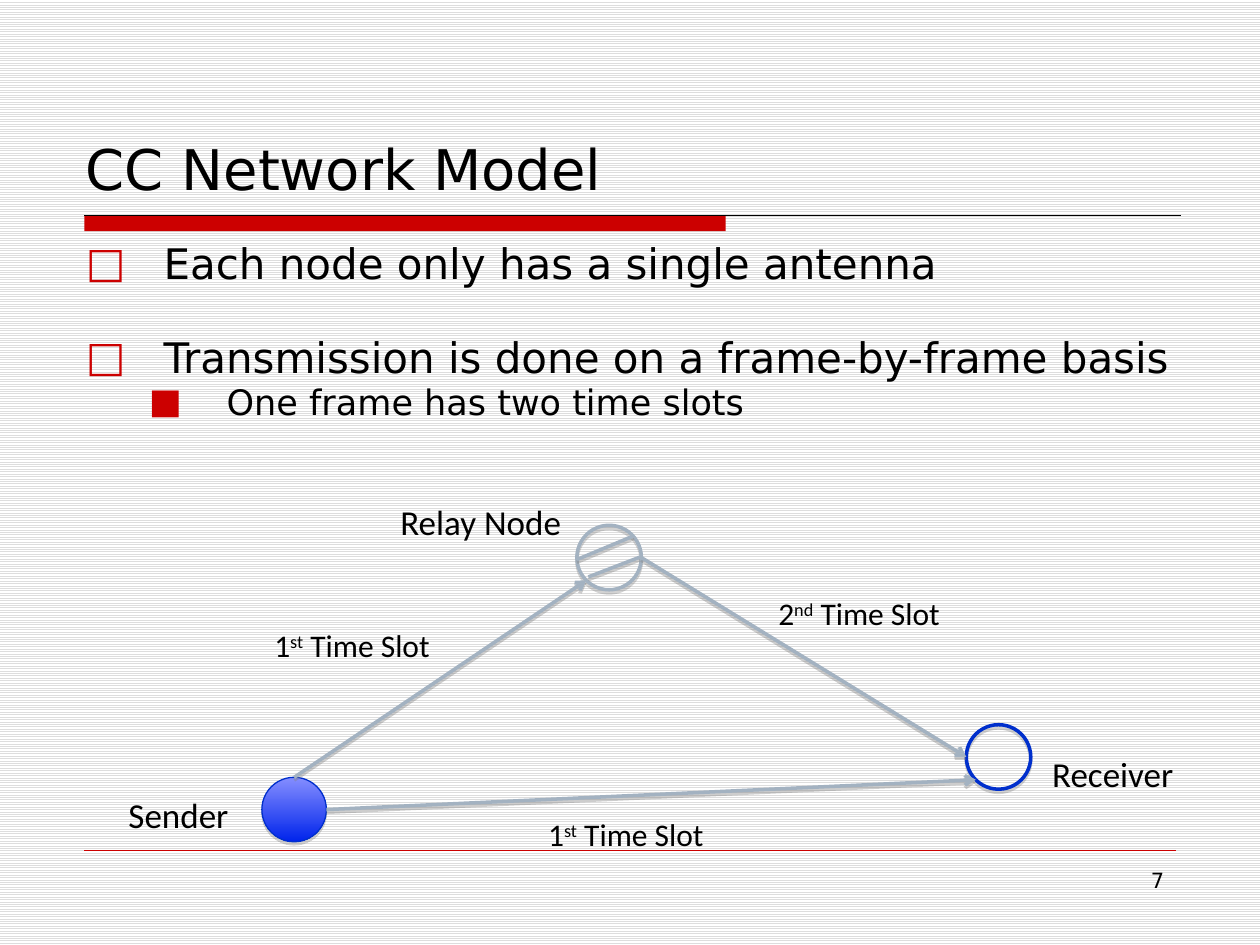
"""Build the CC Network Model slide."""
import math

import pptx
import pptx.dml.color
import pptx.enum.dml
import pptx.enum.shapes
import pptx.enum.text
import pptx.oxml
import pptx.oxml.ns
import pptx.util
from lxml import etree

Cm, Pt = pptx.util.Cm, pptx.util.Pt
RGBColor = pptx.dml.color.RGBColor
SHAPE = pptx.enum.shapes.MSO_SHAPE
ALIGN = pptx.enum.text.PP_ALIGN
qn = pptx.oxml.ns.qn

BLACK = RGBColor(0x00, 0x00, 0x00)
WHITE = RGBColor(0xFF, 0xFF, 0xFF)
STRIPE = RGBColor(0xDD, 0xDD, 0xDD)
RED = RGBColor(0xCC, 0x00, 0x00)
STEEL = RGBColor(0xA3, 0xB2, 0xC1)
BLUE = RGBColor(0x00, 0x2F, 0xCC)
GRADIENT = [RGBColor(0x85, 0x8E, 0xFF), RGBColor(0x00, 0x24, 0xEB)]
SHADOW = RGBColor(0x80, 0x80, 0x80)

HEAD_FONT, LABEL_FONT = "DejaVu Sans", "Calibri"
DIAMETER = 1.3

BULLETS = [
    ("Each node only has a single antenna", 0, 24, "□", 1.57, 1.57, 4.8, 1),
    ("Transmission is done on a frame-by-frame basis", 0, 24, "□", 1.57, 1.57, 30.8, 0.8),
    ("One frame has two time slots", 1, 20, "■", 2.84, 1.57, 4, 0.8),
]
NODES = {
    "sender": (5.28, 15.67, BLUE, 0.75),
    "relay": (11.63, 10.59, STEEL, 2),
    "receiver": (19.48, 14.61, BLUE, 2),
}
RELAY_STRIPES = [((11.86, 11.63), (12.9, 11.23)), ((11.63, 11.28), (12.78, 10.8))]
ARROWS = [
    ("sender", 0, "receiver", 135),
    ("sender", 270, "relay", 135),
    ("relay", 0, "receiver", 180),
]
LABELS = [
    (2.34, 15.88, 2.54, 1.09, 20, ["Sender"]),
    (20.96, 15.04, 2.97, 1.09, 20, ["Receiver"]),
    (7.82, 9.96, 3.78, 1.09, 20, ["Relay Node"]),
    (10.8, 16.31, 3.68, 1.02, 18, ["1", "st", " Time Slot"]),
    (15.44, 11.86, 3.84, 1.02, 18, ["2", "nd", " Time Slot"]),
    (5.28, 12.5, 3.68, 1.02, 18, ["1", "st", " Time Slot"]),
]


def set_effects(sp, alpha=0, dist=0):
    """Replace the theme shadow with a given one, or with none."""
    effects = etree.SubElement(sp.element.spPr, qn("a:effectLst"))
    if alpha:
        shadow = etree.SubElement(effects, qn("a:outerShdw"), blurRad="0",
                                  dist=str(Pt(dist)), dir="5400000", rotWithShape="0")
        color = etree.SubElement(shadow, qn("a:srgbClr"), val=str(SHADOW))
        etree.SubElement(color, qn("a:alpha"), val=str(alpha * 1000))


def add_line(s, start, end, color, width, arrow=False, shadow=True):
    """Add a straight line, optionally with an arrowhead and a shadow."""
    sp = s.shapes.add_connector(pptx.enum.shapes.MSO_CONNECTOR.STRAIGHT,
                                *(Cm(v) for v in start + end))
    sp.line.color.rgb = color
    sp.line.width = Pt(width)
    if arrow:
        etree.SubElement(sp.element.spPr.find(qn("a:ln")), qn("a:tailEnd"), type="arrow")
    set_effects(sp, *((38, 1.6) if shadow else ()))


def add_box(s, x, y, w, h, wrap=True):
    """Add a text box and return its frame."""
    tf = s.shapes.add_textbox(Cm(x), Cm(y), Cm(w), Cm(h)).text_frame
    tf.word_wrap = wrap
    return tf


def add_run(p, text, size, font):
    """Add one black run."""
    r = p.add_run()
    r.text = text
    r.font.size = Pt(size)
    r.font.name = font
    r.font.color.rgb = BLACK
    return r


def add_bullets(tf):
    """Fill the frame with the bulleted list."""
    for i, (text, level, size, mark, left, hang, before, spacing) in enumerate(BULLETS):
        p = tf.paragraphs[0] if i == 0 else tf.add_paragraph()
        p.level = level
        p.space_before = Pt(before)
        p.line_spacing = spacing
        pPr = p._p.get_or_add_pPr()
        pPr.set("marL", str(Cm(left)))
        pPr.set("indent", str(-Cm(hang)))
        color = etree.SubElement(pPr, qn("a:buClr"))
        etree.SubElement(color, qn("a:srgbClr"), val=str(RED))
        etree.SubElement(pPr, qn("a:buFont"), typeface=HEAD_FONT)
        etree.SubElement(pPr, qn("a:buChar"), char=mark)
        add_run(p, text, size, HEAD_FONT)


def add_node(s, name):
    """Add one network node."""
    x, y, color, width = NODES[name]
    sp = s.shapes.add_shape(SHAPE.OVAL, Cm(x), Cm(y), Cm(DIAMETER), Cm(DIAMETER))
    if name == "sender":
        sp.fill.gradient()
        sp.fill.gradient_angle = 270
        for stop, shade, position in zip(sp.fill.gradient_stops, GRADIENT, (0, 1)):
            stop.color.rgb = shade
            stop.position = position
    else:
        sp.fill.background()
    sp.line.color.rgb = color
    sp.line.width = Pt(width)
    set_effects(sp, 35, 1.8)


def rim_point(name, degrees):
    """Return the point on a node's rim, clockwise from its right side."""
    x, y = NODES[name][:2]
    radius, angle = DIAMETER / 2, math.radians(degrees)
    return x + radius * (1 + math.cos(angle)), y + radius * (1 + math.sin(angle))


def main():
    prs = pptx.Presentation()
    prs.slide_width, prs.slide_height = Cm(25.4), Cm(19.05)
    s = prs.slides.add_slide(prs.slide_layouts[6])
    fill = s.background.fill
    fill.patterned()
    fill.pattern = pptx.enum.dml.MSO_PATTERN.LIGHT_HORIZONTAL
    fill.fore_color.rgb, fill.back_color.rgb = STRIPE, WHITE

    bar = s.shapes.add_shape(SHAPE.RECTANGLE, Cm(1.7), Cm(4.34), Cm(12.93), Cm(0.32))
    bar.fill.solid()
    bar.fill.fore_color.rgb = RED
    bar.line.fill.background()
    bar.shadow.inherit = False
    add_line(s, (1.7, 4.34), (23.8, 4.34), BLACK, 0.75, shadow=False)
    add_line(s, (1.7, 17.15), (23.7, 17.15), RED, 0.25, shadow=False)

    tf = add_box(s, 1.48, 2.75, 22.86, 1.27)
    tf.vertical_anchor = pptx.enum.text.MSO_ANCHOR.MIDDLE
    add_run(tf.paragraphs[0], "CC Network Model", 32, HEAD_FONT)
    add_bullets(add_box(s, 1.48, 4.66, 23.7, 4.45))

    for name in NODES:
        add_node(s, name)
    for start, end in RELAY_STRIPES:
        add_line(s, start, end, STEEL, 2)
    for source, leave, target, arrive in ARROWS:
        add_line(s, rim_point(source, leave), rim_point(target, arrive), STEEL, 2, arrow=True)

    for x, y, w, h, size, parts in LABELS:
        tf = add_box(s, x, y, w, h, wrap=False)
        tf.auto_size = pptx.enum.text.MSO_AUTO_SIZE.SHAPE_TO_FIT_TEXT
        for i, part in enumerate(parts):
            r = add_run(tf.paragraphs[0], part, size, LABEL_FONT)
            if i == 1:
                r.font._element.set("baseline", "30000")

    p = add_box(s, 18.2, 17.36, 5.52, 1.32).paragraphs[0]
    p.alignment = ALIGN.RIGHT
    add_run(p, "7", 12, HEAD_FONT)
    prs.save("out.pptx")


if __name__ == "__main__":
    main()
